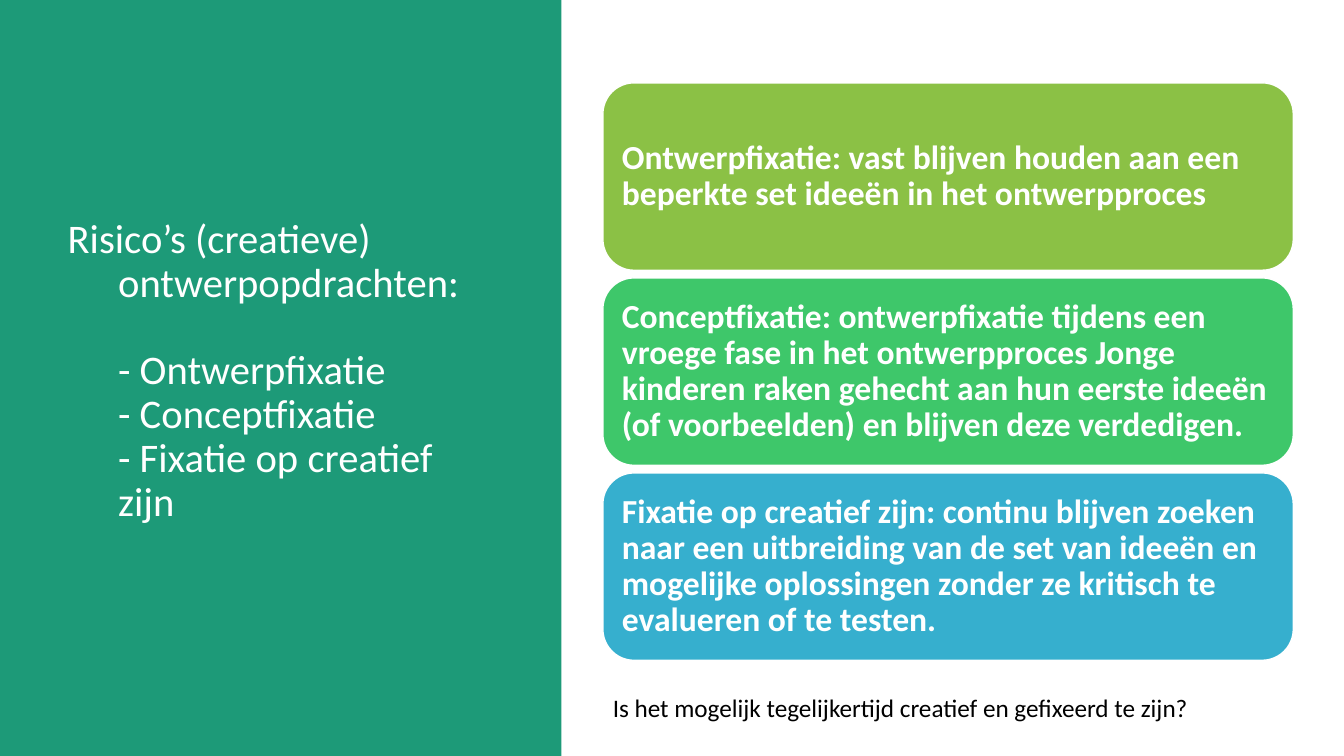
from pptx import Presentation
from pptx.dml.color import RGBColor
from pptx.enum import shapes, text
from pptx.util import Pt

HUES = {
    "panel": "1D9A78",
    "design": "8BC145",
    "concept": "3EC76A",
    "creative": "36AFCE",
    "white": "FFFFFF",
    "black": "000000",
}

RISKS = ["Ontwerpfixatie", "Conceptfixatie", "Fixatie op creatief zijn"]

CARDS = [
    ("design", "Ontwerpfixatie: vast blijven houden aan een beperkte set "
               "ideeën in het ontwerpproces"),
    ("concept", "Conceptfixatie: ontwerpfixatie tijdens een vroege fase in het "
                "ontwerpproces Jonge kinderen raken gehecht aan hun eerste ideeën "
                "(of voorbeelden) en blijven deze verdedigen."),
    ("creative", "Fixatie op creatief zijn: continu blijven zoeken naar een "
                 "uitbreiding van de set van ideeën en mogelijke oplossingen "
                 "zonder ze kritisch te evalueren of te testen."),
]

LEFT, TOP, WIDTH, HEIGHT, STEP = 430.6, 59.2, 493.2, 133.9, 139.3


def color(name):
    return RGBColor.from_string(HUES[name])


def write(frame, lines, size, hue="white", bold=False, spacing=0.9,
          anchor=text.MSO_ANCHOR.MIDDLE, wrap=True):
    """Fill a text frame with one paragraph per line and return them."""
    frame.word_wrap = wrap
    frame.vertical_anchor = anchor
    for i, line in enumerate(lines):
        para = frame.paragraphs[0] if i == 0 else frame.add_paragraph()
        para.text = line
        para.alignment = text.PP_ALIGN.LEFT
        para.line_spacing = spacing
        font = para.font
        font.name, font.size, font.bold = "Calibri", Pt(size), bold
        font.color.rgb = color(hue)
    return frame.paragraphs


def block(slide, kind, box, fill, line=None):
    shape = slide.shapes.add_shape(kind, *map(Pt, box))
    shape.shadow.inherit = False
    shape.fill.solid()
    shape.fill.fore_color.rgb = color(fill)
    if line:
        shape.line.color.rgb = color(line)
        shape.line.width = Pt(1)
    else:
        shape.line.fill.background()
    return shape


def card(slide, top, fill, words):
    shape = block(slide, shapes.MSO_SHAPE.ROUNDED_RECTANGLE,
                  (LEFT, top, WIDTH, HEIGHT), fill, "white")
    frame = shape.text_frame
    frame.margin_left = frame.margin_right = Pt(7.2)
    write(frame, [words], 24, bold=True)


def heading(slide):
    title = slide.shapes.title
    title.left, title.top, title.width, title.height = map(
        Pt, (41.2, 49, 319.7, 433.4))
    frame = title.text_frame
    lines = ["Risico’s (creatieve) ontwerpopdrachten:"]
    lines += [f"- {risk}" for risk in RISKS]
    paras = write(frame, lines, 29)
    frame.auto_size = text.MSO_AUTO_SIZE.NONE
    for i, para in enumerate(paras):
        props = para._p.get_or_add_pPr()
        props.set("marL", str(Pt(36)))
        props.set("indent", str(Pt(0 if i else -36)))
        para.space_before = Pt(31 if i == 1 else 0)


def main():
    deck = Presentation()
    deck.slide_width, deck.slide_height = Pt(960), Pt(540)
    slide = deck.slides.add_slide(deck.slide_layouts[5])

    panel = block(slide, shapes.MSO_SHAPE.RECTANGLE, (0, 0, 401, 540), "panel")
    slide.shapes.title._element.addprevious(panel._element)
    heading(slide)

    for i, (fill, words) in enumerate(CARDS):
        card(slide, TOP + i * STEP, fill, words)

    note = slide.shapes.add_textbox(*map(Pt, (LEFT, 491, 430.6, 29)))
    write(note.text_frame,
          ["Is het mogelijk tegelijkertijd creatief en gefixeerd te zijn?"],
          18, "black", spacing=1, anchor=text.MSO_ANCHOR.TOP, wrap=False)

    deck.save("out.pptx")


if __name__ == "__main__":
    main()
